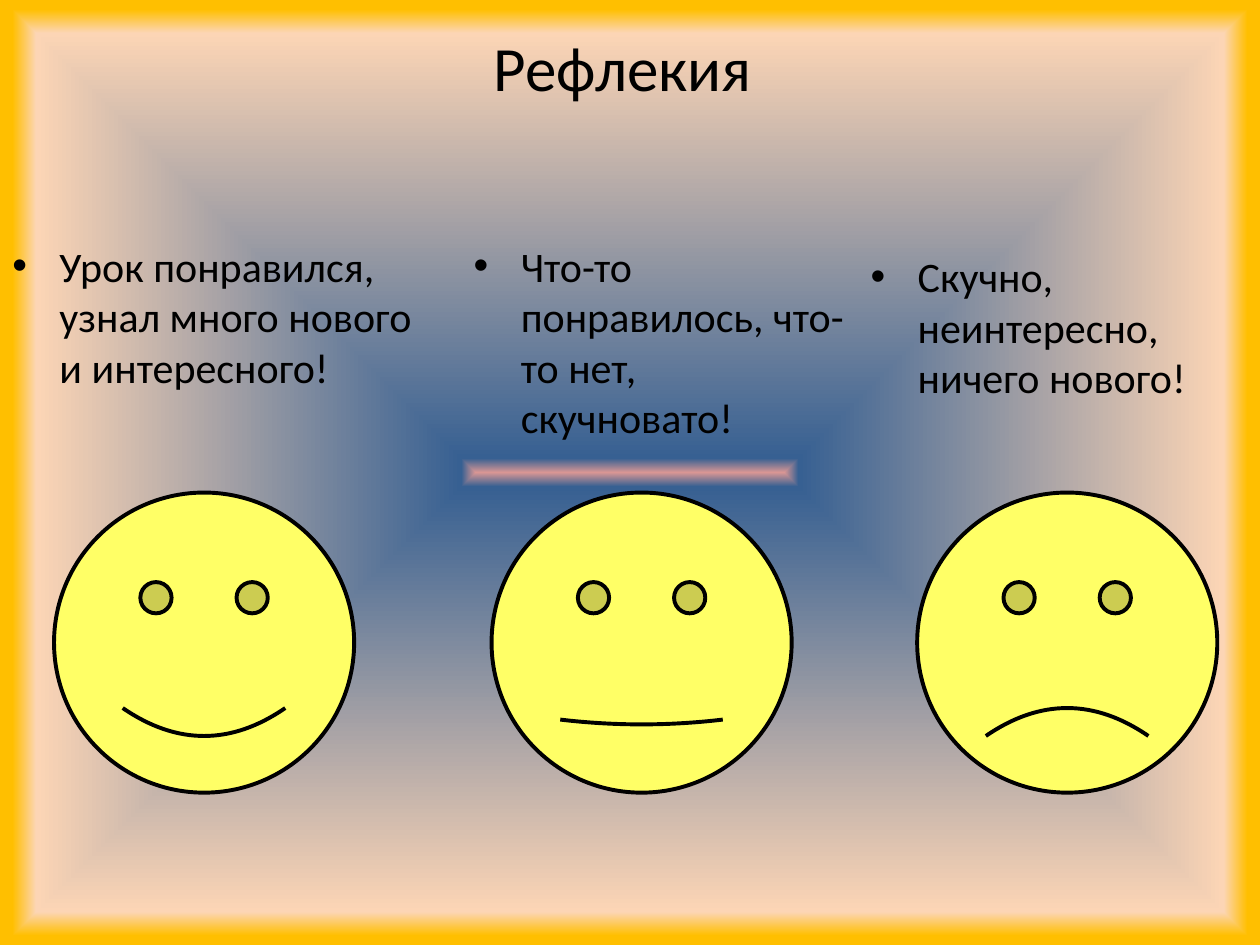
from lxml import etree
from pptx import Presentation
from pptx.dml.color import RGBColor
from pptx.enum.shapes import MSO_SHAPE
from pptx.enum.text import MSO_ANCHOR, MSO_AUTO_SIZE, PP_ALIGN
from pptx.oxml import parse_xml
from pptx.oxml.ns import nsdecls, qn
from pptx.util import Cm, Pt

SMILEY = MSO_SHAPE.SMILEY_FACE
MIDDLE = MSO_ANCHOR.MIDDLE
TOP = MSO_ANCHOR.TOP
NO_FIT = MSO_AUTO_SIZE.NONE
CENTER = PP_ALIGN.CENTER
LEFT = PP_ALIGN.LEFT

FONT = "Calibri"
BLACK = "000000"
YELLOW = "FFFF66"
FACE_TOP = 9.93
FACE_SIZE = 6.05
BULLET_INDENT = Cm(0.95)
GRADIENT = [(0, "17375E"), (0, "400040"), (0, "D99694"),
            (3, "376092"), (93, "FCD5B5"), (98, "FFBF00")]

# face left, mouth curve, text box (left, top, width, height), text
REACTIONS = [
    (1.09, 0.047, (0, 4.72, 8.89, 4.47),
     "Урок понравился, узнал много нового и интересного!"),
    (9.91, 0.008, (9.3, 4.72, 8.2, 4.6),
     "Что-то понравилось, что-то нет, скучновато!"),
    (18.49, -0.047, (17.3, 4.93, 8.1, 4.19),
     "Скучно, неинтересно, ничего нового!"),
]


def color(value):
    """Turn a hex string into a colour."""
    return RGBColor.from_string(value)


def set_background(slide):
    """Fill the slide with a gradient that spreads from the centre."""
    stops = "".join(
        f'<a:gs pos="{percent * 1000}"><a:srgbClr val="{value}"/></a:gs>'
        for percent, value in GRADIENT)
    background = parse_xml(
        f'<p:bg {nsdecls("p", "a")}><p:bgPr><a:gradFill rotWithShape="1">'
        f'<a:gsLst>{stops}</a:gsLst><a:path path="shape">'
        '<a:fillToRect l="50000" t="50000" r="50000" b="50000"/></a:path>'
        '</a:gradFill><a:effectLst/></p:bgPr></p:bg>')
    slide.element[0].insert(0, background)


def format_text(shape, text, size, anchor, alignment):
    """Write one paragraph into a shape and return it."""
    frame = shape.text_frame
    frame.text = text
    frame.word_wrap = True
    frame.auto_size = NO_FIT
    frame.vertical_anchor = anchor
    paragraph = frame.paragraphs[0]
    paragraph.alignment = alignment
    return paragraph, size


def set_font(paragraph, size):
    """Set the font of a paragraph."""
    paragraph.font.name = FONT
    paragraph.font.size = Pt(size)
    paragraph.font.color.rgb = color(BLACK)


def add_title(slide, text):
    """Place and format the title placeholder."""
    title = slide.shapes.title
    title.left, title.top, title.width, title.height = map(
        Cm, (1.27, 0.76, 22.86, 1.14))
    paragraph, size = format_text(title, text, 36, MIDDLE, CENTER)
    set_font(paragraph, size)


def add_bullet_text(slide, box, text):
    """Add a text box with one bulleted paragraph."""
    shape = slide.shapes.add_textbox(*map(Cm, box))
    paragraph, size = format_text(shape, text, 24, TOP, LEFT)
    properties = paragraph._p.get_or_add_pPr()
    properties.set("marL", str(BULLET_INDENT))
    properties.set("indent", str(-BULLET_INDENT))
    etree.SubElement(properties, qn("a:buFont"), typeface="Arial")
    etree.SubElement(properties, qn("a:buChar"), char="•")
    set_font(paragraph, size)


def add_face(slide, left, curve):
    """Add a round face whose mouth bends by the given curve."""
    face = slide.shapes.add_shape(
        SMILEY, Cm(left), Cm(FACE_TOP), Cm(FACE_SIZE), Cm(FACE_SIZE))
    face.adjustments[0] = curve
    face.shadow.inherit = False
    face.fill.solid()
    face.fill.fore_color.rgb = color(YELLOW)
    face.line.color.rgb = color(BLACK)
    face.line.width = Pt(2.25)


def main():
    """Build the slide and save it."""
    presentation = Presentation()
    presentation.slide_width = Cm(25.4)
    presentation.slide_height = Cm(19.05)
    slide = presentation.slides.add_slide(presentation.slide_layouts[5])
    set_background(slide)
    add_title(slide, "Рефлекия ")
    for face_left, curve, box, text in REACTIONS:
        add_face(slide, face_left, curve)
        add_bullet_text(slide, box, text)
    presentation.save("out.pptx")


if __name__ == "__main__":
    main()
